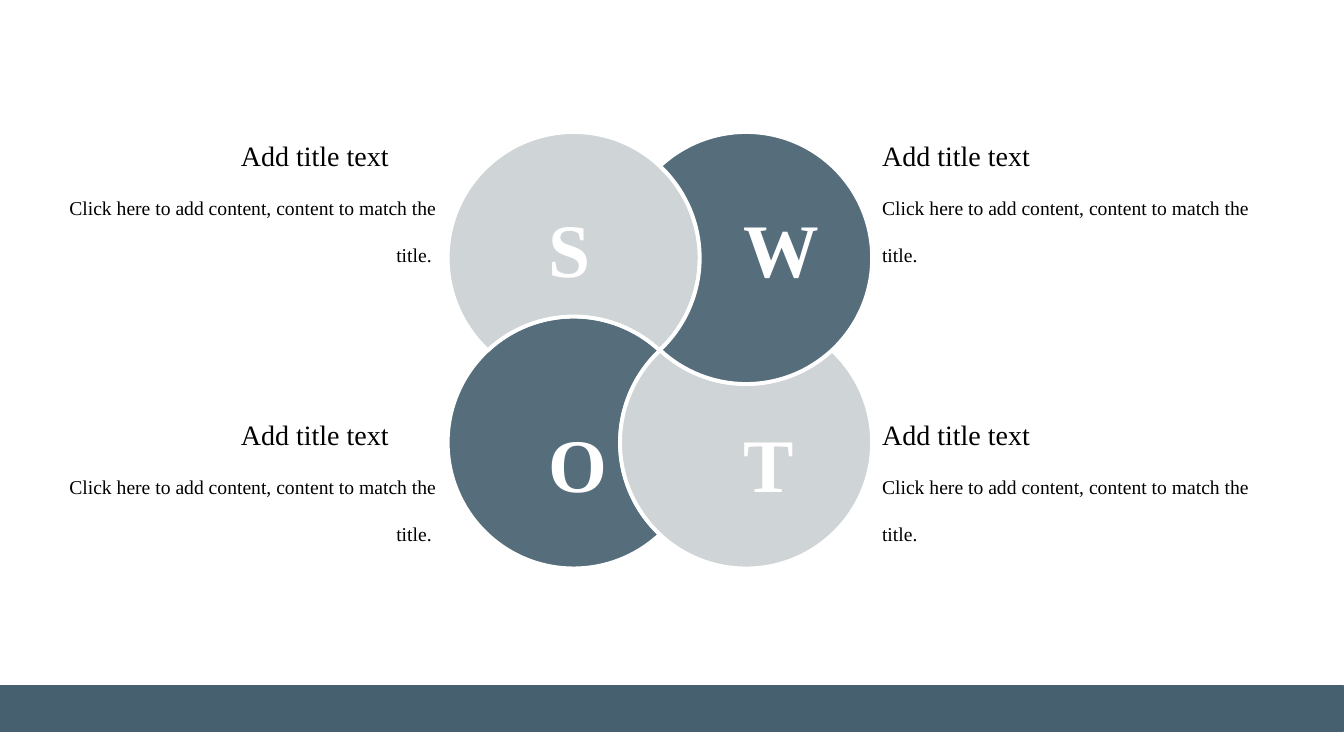
from dataclasses import dataclass
from math import acos, atan2, cos, dist, pi, sin, tan

from lxml.etree import SubElement
from pptx import Presentation
from pptx.dml.color import RGBColor
from pptx.enum.shapes import MSO_SHAPE as Preset
from pptx.enum.text import MSO_AUTO_SIZE as AutoSize, PP_ALIGN as Align
from pptx.oxml.ns import qn
from pptx.util import Inches, Pt


@dataclass(frozen=True)
class Theme:
    font: str = "Times New Roman"
    dark: str = "566D7C"
    light: str = "CFD4D6"
    bar: str = "466070"
    white: str = "FFFFFF"
    black: str = "000000"
    letter_size: int = 54
    heading_size: int = 20
    body_size: int = 14
    outline: float = 2.75


THEME = Theme()
HEADING = "Add title text"
BODY = "Click here to add content, content to match the title."

PETALS = [
    ("O", (0, 1), (1, 1), THEME.dark),
    ("T", (1, 1), (1, 0), THEME.light),
    ("S", (0, 0), (0, 1), THEME.light),
    ("W", (1, 0), (0, 0), THEME.dark),
]
LETTERS = [("S", 0, 0), ("W", 1, 0), ("O", 0, 1), ("T", 1, 1)]
SIDES = [
    dict(heading_left=8.65, body_left=8.65, body_width=4.18, align=Align.LEFT, body=BODY),
    dict(heading_left=2.29, body_left=0.3, body_width=4.13, align=Align.RIGHT, body=BODY + " "),
]

WIDTH, HEIGHT = 13.33, 7.5
BAR_BOX = (-0.03, 6.8, 13.35, 0.46)
RADIUS = 1.25
CENTER_X, CENTER_Y = (5.69, 7.4), (2.56, 4.39)
LETTER_LEFT, LETTER_TOP = (5.34, 7.28), (1.95, 4.09)
HEADING_TOP = (1.32, 4.09)
BODY_DROP = 0.34


def center(cell):
    column, row = cell
    return CENTER_X[column], CENTER_Y[row]


def arc_curves(middle, angles):
    def on_circle(angle, pull=0.0):
        x = middle[0] + RADIUS * (cos(angle) - pull * sin(angle))
        y = middle[1] + RADIUS * (sin(angle) + pull * cos(angle))
        return Inches(x), Inches(y)

    curves = []
    for start, end in zip(angles, angles[1:]):
        pull = 4 / 3 * tan((end - start) / 4)
        curves.append((on_circle(start, pull), on_circle(end, -pull), on_circle(end)))
    return curves


def petal_curves(cell, cover_cell):
    own, cover = center(cell), center(cover_cell)
    toward = atan2(cover[1] - own[1], cover[0] - own[0])
    half = acos(dist(own, cover) / (2 * RADIUS))
    turns = [half, pi / 2, pi, 3 * pi / 2, 2 * pi - half]
    outer = arc_curves(own, [toward + turn for turn in turns])
    inner = arc_curves(cover, [toward + pi + turn for turn in (half, 0, -half)])
    return outer + inner


def paint(shape, fill, line, line_width):
    shape.shadow.inherit = False
    shape.fill.solid()
    shape.fill.fore_color.rgb = RGBColor.from_string(fill)
    shape.line.color.rgb = RGBColor.from_string(line)
    shape.line.width = Pt(line_width)


def add_petal(slide, cell, cover_cell, color):
    curves = petal_curves(cell, cover_cell)
    corners = [curve[-1] for curve in curves]
    builder = slide.shapes.build_freeform(*corners[-1], scale=1.0)
    builder.add_line_segments(corners, close=False)
    shape = builder.convert_to_shape()
    outline = next(shape.element.iter(qn("a:path")))
    for segment, curve in zip(outline.findall(qn("a:lnTo")), curves):
        outline.remove(segment)
        bezier = SubElement(outline, qn("a:cubicBezTo"))
        for x, y in curve:
            SubElement(bezier, qn("a:pt"), x=str(x - shape.left), y=str(y - shape.top))
    SubElement(outline, qn("a:close"))
    paint(shape, color, THEME.white, THEME.outline)


def add_text(slide, box, text, size, color, bold=False, align=Align.LEFT, spacing=1.0):
    shape = slide.shapes.add_textbox(*map(Inches, box))
    frame = shape.text_frame
    frame.word_wrap = True
    frame.auto_size = AutoSize.SHAPE_TO_FIT_TEXT
    frame.text = text
    paragraph = frame.paragraphs[0]
    paragraph.alignment = align
    paragraph.line_spacing = spacing
    font = paragraph.runs[0].font
    font.name, font.size, font.bold = THEME.font, Pt(size), bold
    font.color.rgb = RGBColor.from_string(color)


def main():
    presentation = Presentation()
    presentation.slide_width, presentation.slide_height = Inches(WIDTH), Inches(HEIGHT)
    slide = presentation.slides.add_slide(presentation.slide_layouts[6])

    bar = slide.shapes.add_shape(Preset.RECTANGLE, *map(Inches, BAR_BOX))
    paint(bar, THEME.bar, THEME.bar, 1)

    for letter, cell, cover_cell, color in PETALS:
        add_petal(slide, cell, cover_cell, color)
    for letter, column, row in LETTERS:
        box = (LETTER_LEFT[column], LETTER_TOP[row], 1.66, 1.01)
        add_text(slide, box, letter, THEME.letter_size, THEME.white, bold=True)

    for side in SIDES:
        for top in HEADING_TOP:
            heading_box = (side["heading_left"], top, 2.06, 0.44)
            add_text(slide, heading_box, HEADING, THEME.heading_size, THEME.black,
                     align=Align.JUSTIFY)
            body_box = (side["body_left"], top + BODY_DROP, side["body_width"], 0.97)
            add_text(slide, body_box, side["body"], THEME.body_size, THEME.black,
                     align=side["align"], spacing=2.0)

    presentation.save("out.pptx")


if __name__ == "__main__":
    main()
